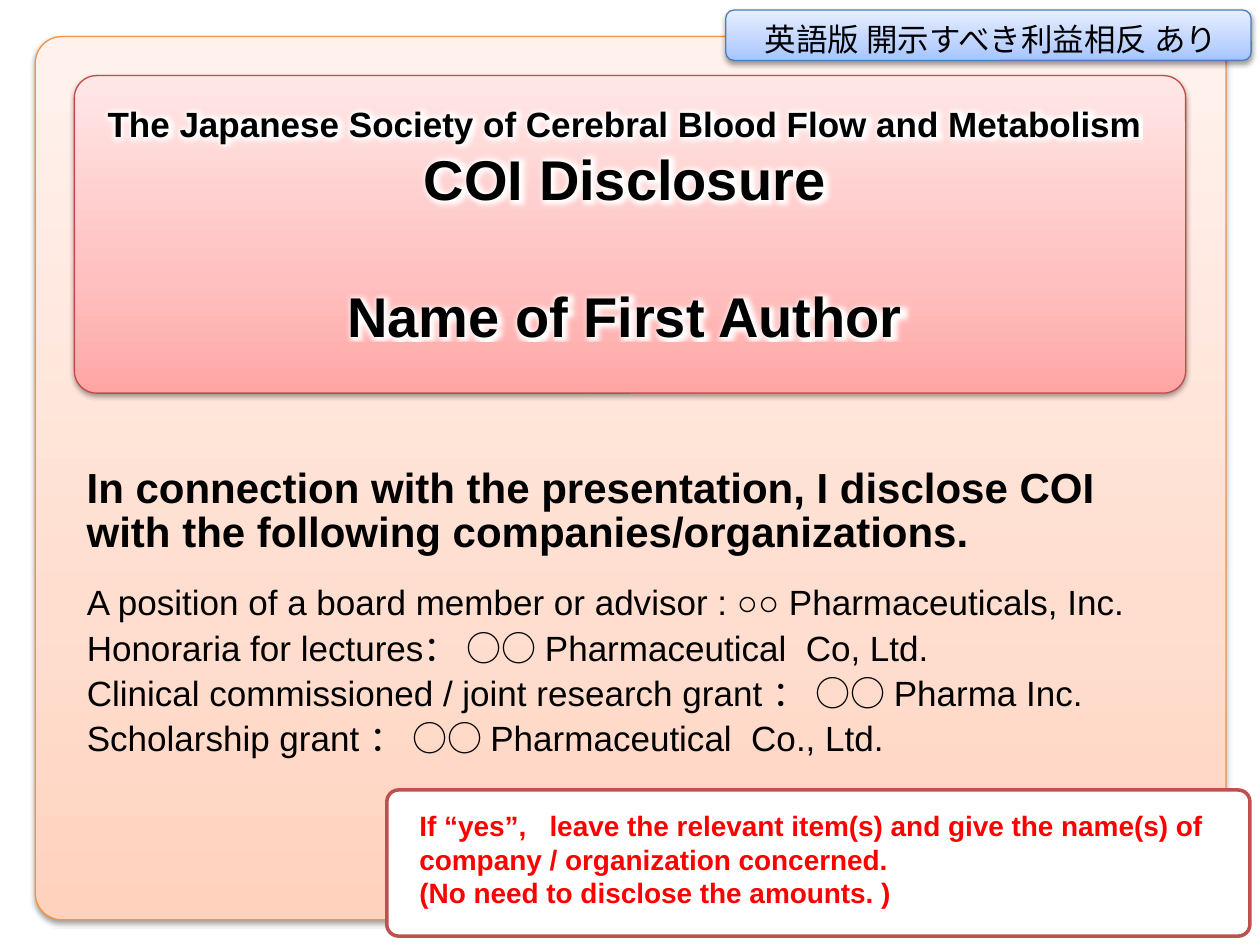
import copy

from lxml import etree
from pptx import Presentation
from pptx import util as u
from pptx.dml.color import RGBColor
from pptx.enum import shapes, text
from pptx.oxml.ns import qn

COLORS = {
    "black": "000000", "white": "FFFFFF", "red": "FF0000",
    "orange_line": "F69240", "pink_line": "BF4C48",
    "blue_line": "4B7EBC", "note_line": "C0504D",
}
GRADIENTS = {
    "orange": ("FFD2BD", "FFDED0", "FFF2ED"),
    "pink": ("FFA6A5", "FFC0BF", "FFE7E7"),
    "blue": ("A4C4FF", "BFD4FF", "E6EEFF"),
}
STOPS = (0, 0.35, 1)
LATIN, CJK = "Arial", "Noto Sans CJK JP"


def rgb(name):
    return RGBColor.from_string(COLORS[name])


def add_effect(parent, tag, color, alpha, **attrs):
    effect = etree.SubElement(parent, qn(tag), {k: str(v) for k, v in attrs.items()})
    clr = etree.SubElement(effect, qn("a:srgbClr"), val=COLORS[color])
    etree.SubElement(clr, qn("a:alpha"), val=str(alpha * 1000))


class Deck:
    """Holds the presentation, its current slide and the shared style."""

    def __init__(self, width, height):
        self.prs = Presentation()
        self.prs.slide_width, self.prs.slide_height = u.Inches(width), u.Inches(height)
        self.s = self.prs.slides.add_slide(self.prs.slide_layouts[5])

    def panel(self, box, line, weight=0.75, radius=None, gradient=None):
        """Rounded panel: a shaded gradient with shadow, or plain white."""
        sp = self.s.shapes.add_shape(
            shapes.MSO_SHAPE.ROUNDED_RECTANGLE, *map(u.Inches, box))
        if radius is not None:
            sp.adjustments[0] = radius
        sp.line.color.rgb = rgb(line)
        sp.line.width = u.Pt(weight)
        sp.shadow.inherit = False
        if gradient is None:
            sp.fill.solid()
            sp.fill.fore_color.rgb = rgb("white")
            return
        sp.fill.gradient()
        sp.fill.gradient_angle = 90
        stops = sp._element.spPr.find(".//" + qn("a:gsLst"))
        stops.append(copy.deepcopy(stops[0]))
        for stop, position, color in zip(
                sp.fill.gradient_stops, STOPS, GRADIENTS[gradient]):
            stop.position = position
            stop.color.rgb = RGBColor.from_string(color)
        add_effect(sp._element.spPr.find(qn("a:effectLst")), "a:outerShdw", "black", 38,
                   blurRad=u.Pt(3.1), dist=u.Pt(1.6), dir=5400000, rotWithShape=0)

    def fill_text(self, tf, lines, size, bold=False, color="black", font=LATIN, **para):
        """Fill a text frame; para holds paragraph format values."""
        for i, line in enumerate(lines):
            p = tf.paragraphs[0] if i == 0 else tf.add_paragraph()
            for name, value in para.items():
                setattr(p, name, value)
            r = p.add_run()
            r.text = line
            style = {"size": u.Pt(size), "bold": bold, "name": font}
            for name, value in style.items():
                setattr(r.font, name, value)
            r.font.color.rgb = rgb(color)
            latin = r.font._element.find(qn("a:latin"))
            latin.addnext(latin.makeelement(qn("a:ea"), {"typeface": CJK}))

    def text(self, box, lines, size, wrap=True, **style):
        tf = self.s.shapes.add_textbox(*map(u.Inches, box)).text_frame
        tf.word_wrap = wrap
        self.fill_text(tf, lines, size, **style)

    def title(self, box, lines, sizes, gaps):
        """Place the title in front of the panels, with a white glow."""
        sp = self.s.shapes.title
        sp.left, sp.top, sp.width, sp.height = map(u.Inches, box)
        self.s.shapes._spTree.append(sp._element)
        tf = sp.text_frame
        frame = {"word_wrap": True, "auto_size": text.MSO_AUTO_SIZE.NONE,
                 "vertical_anchor": text.MSO_ANCHOR.TOP}
        for name, value in frame.items():
            setattr(tf, name, value)
        self.fill_text(tf, lines, sizes[0], bold=True, alignment=text.PP_ALIGN.CENTER)
        for p, size, gap in zip(tf.paragraphs, sizes, gaps):
            p.space_before = u.Pt(gap)
            font = p.runs[0].font
            font.size = u.Pt(size)
            fill = font._element.find(qn("a:solidFill"))
            effects = fill.makeelement(qn("a:effectLst"), {})
            fill.addnext(effects)
            add_effect(effects, "a:glow", "white", 100, rad=u.Pt(5))


def main():
    deck = Deck(10, 7.5)
    deck.panel((0.28, 0.29, 9.45, 7.01), "orange_line", radius=0.03, gradient="orange")
    deck.panel((0.59, 0.6, 8.82, 2.52), "pink_line", radius=0.07, gradient="pink")
    deck.title((0, 0.76, 9.92, 2.05),
               ["The Japanese Society of Cerebral Blood Flow and Metabolism",
                "COI Disclosure", "Name of First Author"],
               sizes=(20, 32, 32), gaps=(0, 0, 40))

    deck.panel((3.07, 6.27, 6.85, 1.16), "note_line", weight=2, radius=0.08)
    deck.text((0.59, 3.67, 8.23, 0.8),
              ["In connection with the presentation, I disclose COI "
               "with the following companies/organizations."],
              24, bold=True, line_spacing=u.Pt(25))

    interests = [
        "A position of a board member or advisor : ○○ Pharmaceuticals, Inc.",
        "Honoraria for lectures： ○○ Pharmaceutical  Co, Ltd.",
        "Clinical commissioned / joint research grant ： ○○ Pharma Inc.",
        "Scholarship grant ： ○○ Pharmaceutical  Co., Ltd.",
    ]
    for i, interest in enumerate(interests):
        deck.text((0.59, 4.56 + 0.36 * i, 9.12, 0.44), [interest], 20)

    deck.text((3.23, 6.37, 6.69, 0.94),
              ["If “yes”,   leave the relevant item(s) and give the name(s) of",
               "company / organization concerned.",
               "(No need to disclose the amounts. )"],
              16, bold=True, color="red")

    deck.panel((5.76, 0.08, 4.17, 0.4), "blue_line", gradient="blue")
    deck.text((5.91, 0.11, 3.91, 0.4), ["英語版 開示すべき利益相反 あり"], 18,
              wrap=False, font=CJK, alignment=text.PP_ALIGN.CENTER)
    deck.prs.save("out.pptx")


if __name__ == "__main__":
    main()
